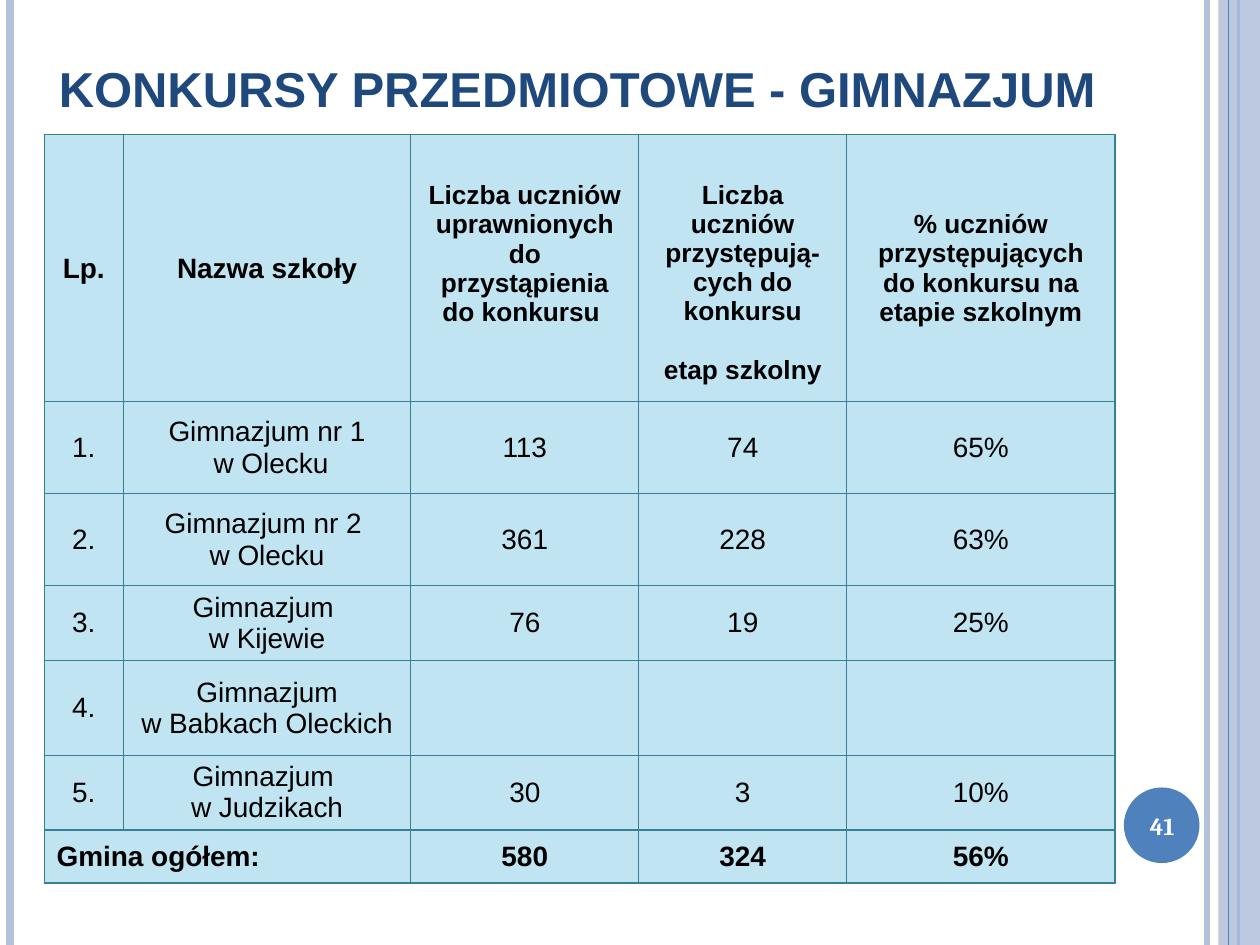
import pptx
import pptx.util
import pptx.dml.color
import pptx.enum.shapes
import pptx.enum.text
import pptx.oxml
import pptx.oxml.ns
from pptx.util import Inches

RGBColor = pptx.dml.color.RGBColor
Pt = pptx.util.Pt
ALIGN = pptx.enum.text.PP_ALIGN
ANCHOR = pptx.enum.text.MSO_ANCHOR
SHAPE = pptx.enum.shapes.MSO_SHAPE

PALE = RGBColor(0xB3, 0xC1, 0xDB)
BLUE = RGBColor(0x4F, 0x81, 0xBD)
NAVY = RGBColor(0x1F, 0x49, 0x7D)
CELL = RGBColor(0xC0, 0xE4, 0xF1)
BORDER = RGBColor(0x36, 0x80, 0x94)
BLACK = RGBColor(0, 0, 0)
WHITE = RGBColor(0xFF, 0xFF, 0xFF)

TITLE = "KONKURSY PRZEDMIOTOWE - GIMNAZJUM"
PAGE_NUMBER = "41"
ROWS = [
    ("Lp.", "Nazwa szkoły",
     "Liczba uczniów uprawnionych do przystąpienia do konkursu ",
     "Liczba uczniów przystępują-cych do konkursu\netap szkolny",
     "% uczniów przystępujących do konkursu na etapie szkolnym"),
    ("1.", "Gimnazjum nr 1\v w Olecku", "113", "74", "65%"),
    ("2.", "Gimnazjum nr 2 \vw Olecku", "361", "228", "63%"),
    ("3.", "Gimnazjum \vw Kijewie", "76", "19", "25%"),
    ("4.", "Gimnazjum\nw Babkach Oleckich", "", "", ""),
    ("5.", "Gimnazjum \vw Judzikach", "30", "3", "10%"),
    ("Gmina ogółem:", "", "580", "324", "56%"),
]
COLUMN_WIDTHS = [0.63, 2.28, 1.81, 1.65, 2.13]
ROW_HEIGHTS = [2.12, 0.73, 0.73, 0.58, 0.75, 0.58, 0.42]
BACK_STRIPES = [(9.58, PALE, 3), (0.08, PALE, 4.5), (9.83, BLUE, 1.5)]
FRONT_STRIPES = [(9.75, BLUE, 0.75)]


def add_stripes(page, stripes):
    for x, color, width in stripes:
        stripe = page.shapes.add_connector(
            pptx.enum.shapes.MSO_CONNECTOR.STRAIGHT,
            Inches(x), Inches(0), Inches(x), Inches(7.5))
        stripe.line.color.rgb = color
        stripe.line.width = Pt(width)
        properties = stripe._element.spPr
        properties.append(pptx.oxml.parse_xml(
            f'<a:effectLst {pptx.oxml.ns.nsdecls("a")}/>'))


def add_filled(page, kind, place, color):
    shape = page.shapes.add_shape(kind, *map(Inches, place))
    shape.shadow.inherit = False
    shape.fill.solid()
    shape.fill.fore_color.rgb = color
    shape.line.fill.background()
    return shape


def style_text(frame, size, face, color, bold, align=ALIGN.CENTER):
    for para in frame.paragraphs:
        para.alignment = align
        para.font.size = Pt(size)
        para.font.name = face
        para.font.color.rgb = color
        para.font.bold = bold


def add_borders(cell):
    properties = cell._tc.get_or_add_tcPr()
    for index, side in enumerate("LRTB"):
        properties.insert(index, pptx.oxml.parse_xml(
            f'<a:ln{side} {pptx.oxml.ns.nsdecls("a")} w="{Pt(0.75)}"><a:solidFill>'
            f'<a:srgbClr val="{BORDER}"/></a:solidFill></a:ln{side}>'))


def add_results(page):
    table = page.shapes.add_table(
        len(ROWS), len(COLUMN_WIDTHS), Inches(0.35), Inches(1.07),
        Inches(sum(COLUMN_WIDTHS)), Inches(sum(ROW_HEIGHTS))).table
    for column, width in zip(table.columns, COLUMN_WIDTHS):
        column.width = Inches(width)
    last = len(ROWS) - 1
    for r, texts in enumerate(ROWS):
        table.rows[r].height = Inches(ROW_HEIGHTS[r])
        for c, text in enumerate(texts):
            cell = table.cell(r, c)
            cell.text = text
            cell.vertical_anchor = ANCHOR.MIDDLE
            cell.fill.solid()
            cell.fill.fore_color.rgb = CELL
            add_borders(cell)
            size = 15 if r == 0 and c >= 2 else 16
            align = ALIGN.LEFT if r == last and c == 0 else ALIGN.CENTER
            style_text(cell.text_frame, size, "Arial", BLACK, r in (0, last), align)
    table.cell(last, 0).merge(table.cell(last, 1))
    table.cell(0, 2).margin_bottom = Inches(0.28)
    stage = table.cell(0, 3)
    stage.margin_top = Inches(0.28)
    stage.text_frame.paragraphs[1].space_before = Pt(17)


def main():
    deck = pptx.Presentation()
    deck.slide_width, deck.slide_height = Inches(10), Inches(7.5)
    page = deck.slides.add_slide(deck.slide_layouts[5])

    add_stripes(page, BACK_STRIPES)
    band = add_filled(page, SHAPE.RECTANGLE, (9.67, 0, 0.33, 7.5), PALE)
    color = band._element.spPr.find(".//" + pptx.oxml.ns.qn("a:srgbClr"))
    color.append(pptx.oxml.parse_xml(
        f'<a:alpha {pptx.oxml.ns.nsdecls("a")} val="87000"/>'))
    add_stripes(page, FRONT_STRIPES)
    add_filled(page, SHAPE.OVAL, (8.92, 6.25, 0.6, 0.6), BLUE)

    title = page.shapes.title
    title.left, title.top = Inches(-0.03), Inches(0.29)
    title.width, title.height = Inches(9.22), Inches(0.69)
    title.text_frame.text = TITLE
    title.text_frame.vertical_anchor = ANCHOR.BOTTOM
    style_text(title.text_frame, 28, "Arial", NAVY, True)

    add_results(page)

    number = page.shapes.add_textbox(*map(Inches, (8.89, 6.27, 0.67, 0.57)))
    number.text_frame.word_wrap = True
    number.text_frame.text = PAGE_NUMBER
    number.text_frame.vertical_anchor = ANCHOR.MIDDLE
    style_text(number.text_frame, 14, "Cambria", WHITE, True)

    deck.save("out.pptx")


if __name__ == "__main__":
    main()
